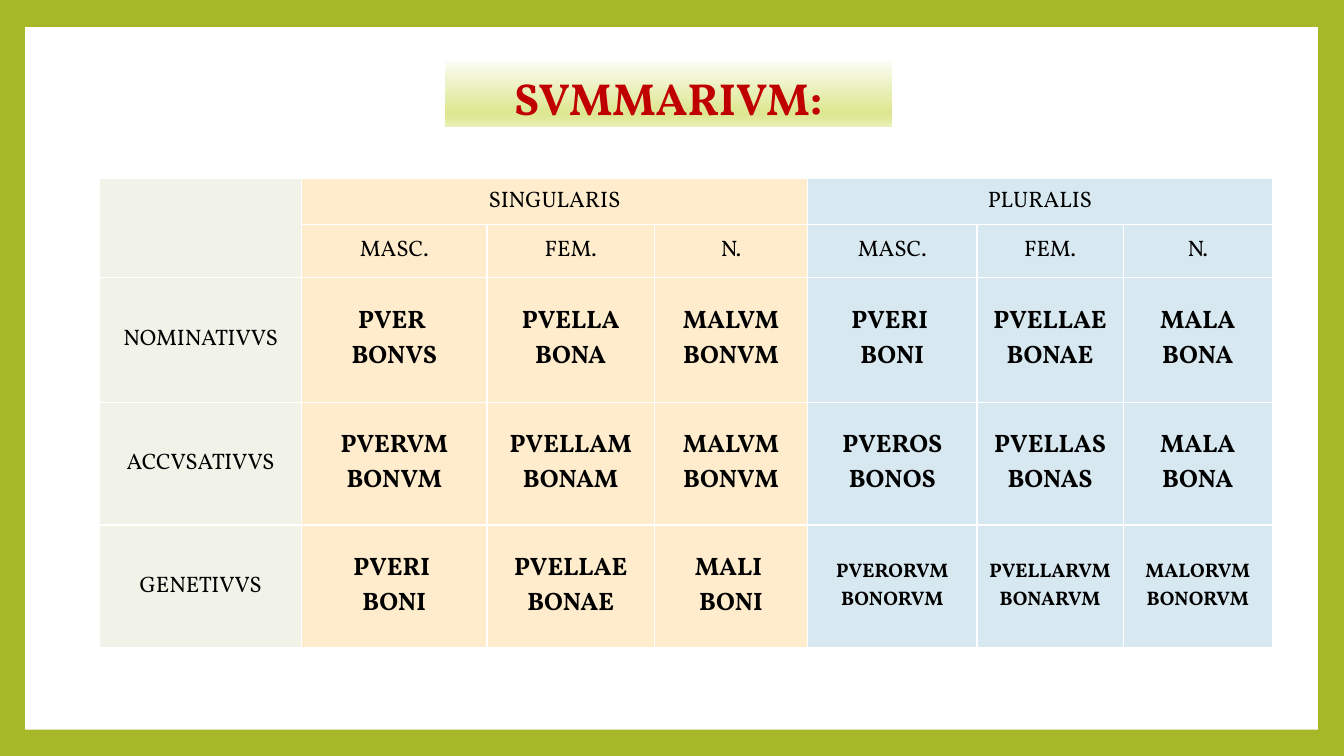
from lxml import etree
from pptx import Presentation
from pptx.dml.color import RGBColor
from pptx.enum.shapes import MSO_SHAPE
from pptx.enum.text import MSO_ANCHOR, MSO_AUTO_SIZE, PP_ALIGN
from pptx.oxml.ns import qn
from pptx.util import Inches, Pt

RECTANGLE = MSO_SHAPE.RECTANGLE
CENTER = PP_ALIGN.CENTER
TOP, MIDDLE = MSO_ANCHOR.TOP, MSO_ANCHOR.MIDDLE
NO_AUTOFIT = MSO_AUTO_SIZE.NONE
TITLE_ONLY = 5

FONT = "Vollkorn"
COLORS = {
    "frame": "A6B727",
    "paper": "FFFFFF",
    "title": "C00000",
    "text": "000000",
    "case": "F1F3E8",
    "singular": "FFECCC",
    "plural": "D8E8F1",
}
TITLE_GRADIENT = [(0, "FBFCF3"), (74, "DEE894"), (83, "DEE894"), (100, "E9F0B8")]

COLUMN_WIDTHS = [2, 1.84, 1.66, 1.52, 1.68, 1.45, 1.48]
ROW_HEIGHTS = [0.46, 0.52, 1.24, 1.22, 1.22]
GENDERS = ["MASC.", "FEM.", "N."]
DECLENSION = [
    ["", "SINGULARIS", "", "", "PLURALIS", "", ""],
    ["", *GENDERS, *GENDERS],
    ["NOMINATIVVS", "PVER \nBONVS", "PVELLA BONA", "MALVM BONVM",
     "PVERI \nBONI", "PVELLAE BONAE", "MALA BONA"],
    ["ACCVSATIVVS", "PVERVM BONVM", "PVELLAM BONAM", "MALVM BONVM",
     "PVEROS BONOS", "PVELLAS BONAS", "MALA BONA"],
    ["GENETIVVS", "PVERI \nBONI", "PVELLAE BONAE", "MALI \nBONI",
     "PVERORVM BONORVM", "PVELLARVM BONARVM", "MALORVM BONORVM"],
]


def rgb(name):
    """Return the named palette colour."""
    return RGBColor.from_string(COLORS[name])


def format_text(text_frame, size, color, bold):
    """Centre every paragraph and style its runs."""
    for paragraph in text_frame.paragraphs:
        paragraph.alignment = CENTER
        for run in paragraph.runs:
            run.font.name = FONT
            run.font.size = Pt(size)
            run.font.bold = bold
            run.font.color.rgb = rgb(color)


def add_frame(slide, left, top, width, height):
    """Colour the background and lay the white page over it."""
    slide.background.fill.solid()
    slide.background.fill.fore_color.rgb = rgb("frame")
    page = slide.shapes.add_shape(
        RECTANGLE, Inches(left), Inches(top), Inches(width), Inches(height))
    page.shadow.inherit = False
    page.fill.solid()
    page.fill.fore_color.rgb = rgb("paper")
    page.line.fill.background()


def fill_gradient(shape, stops):
    """Fill a shape from top to bottom with the given colour stops."""
    shape.fill.gradient()
    shape.fill.gradient_angle = 270
    stop_list = shape.element.spPr.find(qn("a:gradFill")).find(qn("a:gsLst"))
    for stop in list(stop_list):
        stop_list.remove(stop)
    for percent, color in stops:
        stop = etree.SubElement(stop_list, qn("a:gs"), pos=str(percent * 1000))
        etree.SubElement(stop, qn("a:srgbClr"), val=color)


def add_title(slide, left, top, width, height):
    """Place the title on its gradient band."""
    title = slide.shapes.title
    title.left, title.top = Inches(left), Inches(top)
    title.width, title.height = Inches(width), Inches(height)
    fill_gradient(title, TITLE_GRADIENT)
    text_frame = title.text_frame
    text_frame.text = "SVMMARIVM:"
    text_frame.auto_size = NO_AUTOFIT
    text_frame.vertical_anchor = TOP
    paragraph = text_frame.paragraphs[0]
    paragraph.line_spacing = 1.07
    paragraph.space_before = paragraph.space_after = Pt(12)
    format_text(text_frame, 32, "title", True)
    slide.shapes.element.append(title.element)


def add_borders(cell):
    """Draw a thin white line on all four sides of a cell."""
    properties = cell._tc.get_or_add_tcPr()
    for side in ("lnL", "lnR", "lnT", "lnB"):
        line = etree.SubElement(properties, qn(f"a:{side}"), w=str(Pt(1)))
        fill = etree.SubElement(line, qn("a:solidFill"))
        etree.SubElement(fill, qn("a:srgbClr"), val=COLORS["paper"])


def format_cell(cell, row, column):
    """Style a cell by its place in the declension table."""
    add_borders(cell)
    group = "case" if column == 0 else "singular" if column < 4 else "plural"
    cell.fill.solid()
    cell.fill.fore_color.rgb = rgb(group)
    cell.vertical_anchor = MIDDLE
    cell.margin_left = cell.margin_right = Inches(0.01)
    cell.margin_top = cell.margin_bottom = Inches(0.01)
    is_form = row > 1 and column > 0
    is_long = row == 4 and column > 3
    size = 14 if is_long else 18 if is_form else 16
    format_text(cell.text_frame, size, "text", is_form)


def add_declension_table(slide, left, top, width, height):
    """Build the table of cases, numbers and genders."""
    table = slide.shapes.add_table(
        len(ROW_HEIGHTS), len(COLUMN_WIDTHS),
        Inches(left), Inches(top), Inches(width), Inches(height)).table
    for column, column_width in zip(table.columns, COLUMN_WIDTHS):
        column.width = Inches(column_width)
    for row, row_height in zip(table.rows, ROW_HEIGHTS):
        row.height = Inches(row_height)
    for row, texts in enumerate(DECLENSION):
        for column, text in enumerate(texts):
            cell = table.cell(row, column)
            cell.text_frame.text = text
            format_cell(cell, row, column)
    table.cell(0, 0).merge(table.cell(1, 0))
    for first in (1, 4):
        table.cell(0, first).merge(table.cell(0, first + 2))


def main():
    """Create the summary slide and save it."""
    presentation = Presentation()
    presentation.slide_width = Inches(13.33)
    presentation.slide_height = Inches(7.5)
    slide = presentation.slides.add_slide(presentation.slide_layouts[TITLE_ONLY])
    add_frame(slide, 0.25, 0.27, 12.82, 6.97)
    add_declension_table(slide, 0.99, 1.77, 11.63, 4.65)
    add_title(slide, 4.41, 0.61, 4.44, 0.65)
    presentation.save("out.pptx")


if __name__ == "__main__":
    main()
